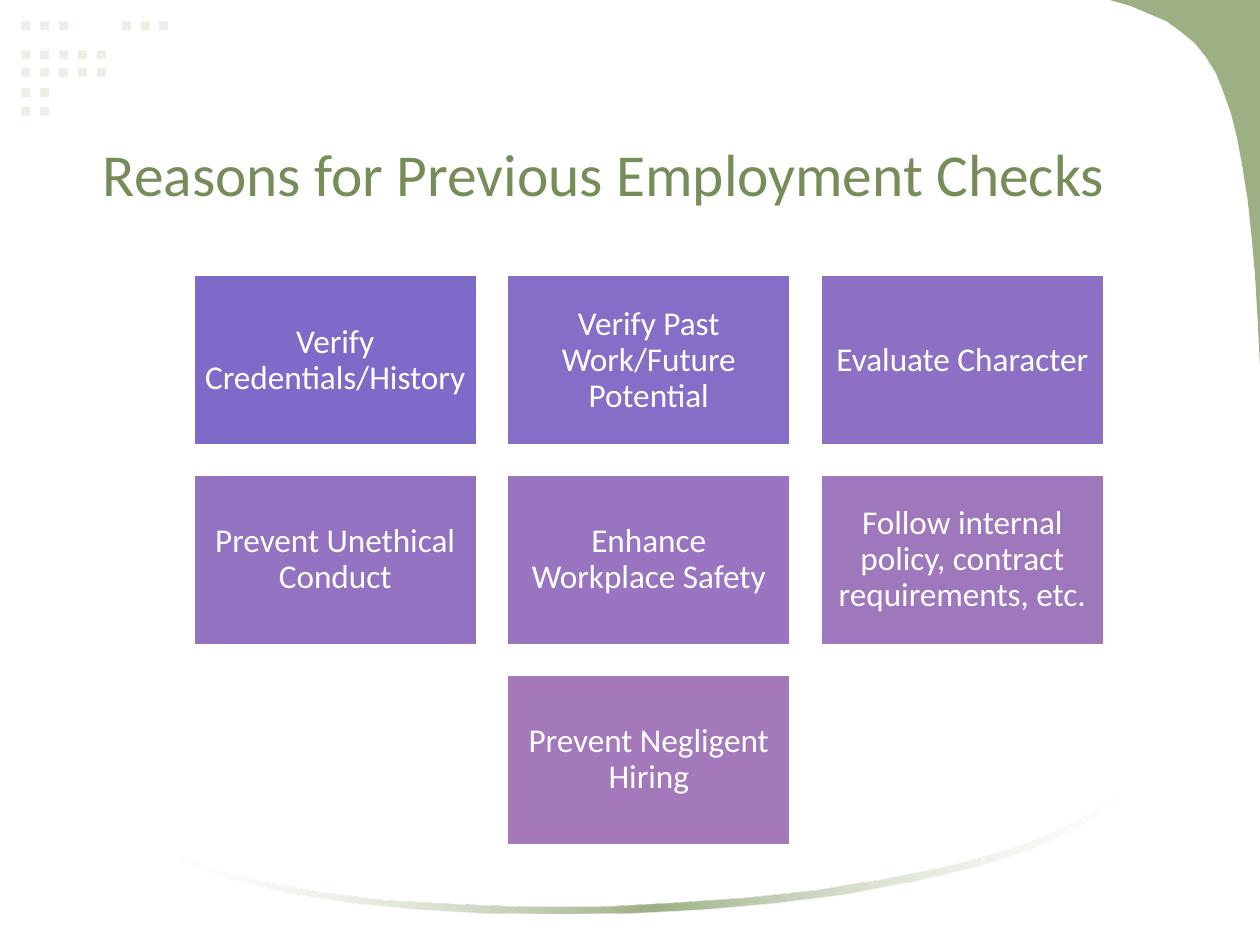
from dataclasses import dataclass

from lxml.etree import SubElement
from pptx import Presentation
from pptx.dml.color import RGBColor
from pptx.enum.shapes import MSO_SHAPE
from pptx.enum.text import MSO_ANCHOR, PP_ALIGN
from pptx.oxml.ns import qn
from pptx.util import Pt


@dataclass(frozen=True)
class Theme:
    font: str = "Calibri"
    title_size: float = 34
    tile_size: float = 19
    title: str = "768D5A"
    white: str = "FFFFFF"
    dot: str = "EBEFE6"
    green: str = "9CB084"


THEME = Theme()

# Dot rows: top edge and left edges
DOT_SIZE = 5
DOT_COLUMNS = [12.24 + 10.8 * column for column in range(5)]
DOT_ROWS = [
    (12.24, DOT_COLUMNS[:3] + [69.8, 80.6, 91]),
    (28.8, DOT_COLUMNS),
    (38.9, DOT_COLUMNS),
    (50.4, DOT_COLUMNS[:2]),
    (61.2, DOT_COLUMNS[:2]),
]

CORNER = [
    (634.3, 0), (720, 0), (720, 209.5), (718.6, 181.4), (717.1, 156.2),
    (715, 133.2), (712.8, 113), (709.9, 95), (707, 79.2), (703.4, 64.8),
    (699.1, 52.6), (694.8, 41.8), (689, 32.4), (682.6, 24.5), (674.6, 18),
    (666.7, 12.2), (656.6, 7.9), (646.6, 3.6),
]
SWOOSH_LOWER = [
    (642.2, 450), (642.2, 455), (634.3, 461.5), (613.4, 474.5), (587.5, 486),
    (556.6, 495.4), (522, 503.3), (484.6, 510.5), (444.2, 515.5),
    (403.2, 519.1), (360.7, 521.3), (319, 522), (277.2, 521.3),
    (237.6, 519.1), (200.9, 515.5), (167, 510.5), (137.5, 503.3),
    (112.3, 495.4), (102.2, 491),
]
SWOOSH_UPPER = [
    (102.2, 488.9), (124.6, 497.5), (152.6, 504), (185, 509.8), (221, 514.1),
    (259.9, 516.2), (300.2, 517.7), (342.7, 517.7), (384.5, 515.5),
    (427, 512.6), (467.3, 508.3), (506.2, 501.8), (542.2, 494.6),
    (574.6, 486), (602.6, 475.2), (625, 463.7),
]

# Tile grid: column, row, fill, text
TILE_LEFT, TILE_TOP = 110.2, 157
TILE_WIDTH, TILE_HEIGHT = 162.7, 97.9
COLUMN_STEP, ROW_STEP = 179.2, 114.1
TILES = [
    (0, 0, "7E6BC9", "Verify Credentials/History"),
    (1, 0, "866DC7", "Verify Past Work/Future Potential"),
    (2, 0, "8D70C4", "Evaluate Character"),
    (0, 1, "9472C2", "Prevent Unethical Conduct"),
    (1, 1, "9974C0", "Enhance Workplace Safety"),
    (2, 1, "9F77BD", "Follow internal policy, contract requirements, etc."),
    (1, 2, "A379BB", "Prevent Negligent Hiring"),
]


def color(value):
    return RGBColor.from_string(value)


def write_text(box, text, *, size, fill, align=PP_ALIGN.LEFT, spacing=1.0,
               inset=(7.2, 3.6)):
    frame = box.text_frame
    frame.word_wrap = True
    frame.vertical_anchor = MSO_ANCHOR.MIDDLE
    frame.margin_left = frame.margin_right = Pt(inset[0])
    frame.margin_top = frame.margin_bottom = Pt(inset[1])
    para = frame.paragraphs[0]
    para.alignment = align
    para.line_spacing = spacing
    span = para.add_run()
    span.text = text
    span.font.name = THEME.font
    span.font.size = Pt(size)
    span.font.color.rgb = color(fill)


def add_rectangle(page, left, top, width, height, fill, line=None):
    box = page.shapes.add_shape(
        MSO_SHAPE.RECTANGLE, Pt(left), Pt(top), Pt(width), Pt(height))
    box.shadow.inherit = False
    box.fill.solid()
    box.fill.fore_color.rgb = color(fill)
    if line:
        box.line.color.rgb = color(line)
        box.line.width = Pt(2)
    else:
        box.line.fill.background()
    return box


def add_outline(page, points, fill):
    corners = [(Pt(x), Pt(y)) for x, y in points]
    builder = page.shapes.build_freeform(*corners[0])
    builder.add_line_segments(corners[1:], close=True)
    outline = builder.convert_to_shape()
    outline.shadow.inherit = False
    outline.line.fill.background()
    outline.fill.solid()
    outline.fill.fore_color.rgb = color(fill)
    return outline


def fade_ends(outline, middle, end):
    """Swap the solid fill for a gradient with translucent ends."""
    solid = outline.element.spPr.find(qn("a:solidFill"))
    gradient = solid.makeelement(qn("a:gradFill"), {"rotWithShape": "1"})
    stops = SubElement(gradient, qn("a:gsLst"))
    for position, value, opacity in ((0, end, 30), (50, middle, 100), (100, end, 30)):
        stop = SubElement(stops, qn("a:gs"), pos=str(position * 1000))
        tint = SubElement(stop, qn("a:srgbClr"), val=value)
        if opacity < 100:
            SubElement(tint, qn("a:alpha"), val=str(opacity * 1000))
    SubElement(gradient, qn("a:lin"), ang="0", scaled="0")
    solid.getparent().replace(solid, gradient)


def add_decoration(page):
    for top, lefts in DOT_ROWS:
        for left in lefts:
            add_rectangle(page, left, top, DOT_SIZE, DOT_SIZE, THEME.dot)
    add_outline(page, CORNER, THEME.green)
    swoosh = add_outline(page, SWOOSH_LOWER + SWOOSH_UPPER, THEME.green)
    fade_ends(swoosh, THEME.green, THEME.white)


def add_title(page, text):
    box = page.shapes.add_textbox(Pt(51.8), Pt(59.8), Pt(619.2), Pt(77.8))
    write_text(box, text, size=THEME.title_size, fill=THEME.title)


def add_tile(page, column, row, fill, text):
    box = add_rectangle(
        page, TILE_LEFT + column * COLUMN_STEP, TILE_TOP + row * ROW_STEP,
        TILE_WIDTH, TILE_HEIGHT, fill, line=THEME.white)
    write_text(box, text, size=THEME.tile_size, fill=THEME.white,
               align=PP_ALIGN.CENTER, spacing=0.9, inset=(5.7, 5.7))


def main():
    deck = Presentation()
    deck.slide_width, deck.slide_height = Pt(720), Pt(540)
    page = deck.slides.add_slide(deck.slide_layouts[6])
    add_decoration(page)
    add_title(page, "Reasons for Previous Employment Checks")
    for tile in TILES:
        add_tile(page, *tile)
    deck.save("out.pptx")


if __name__ == "__main__":
    main()
